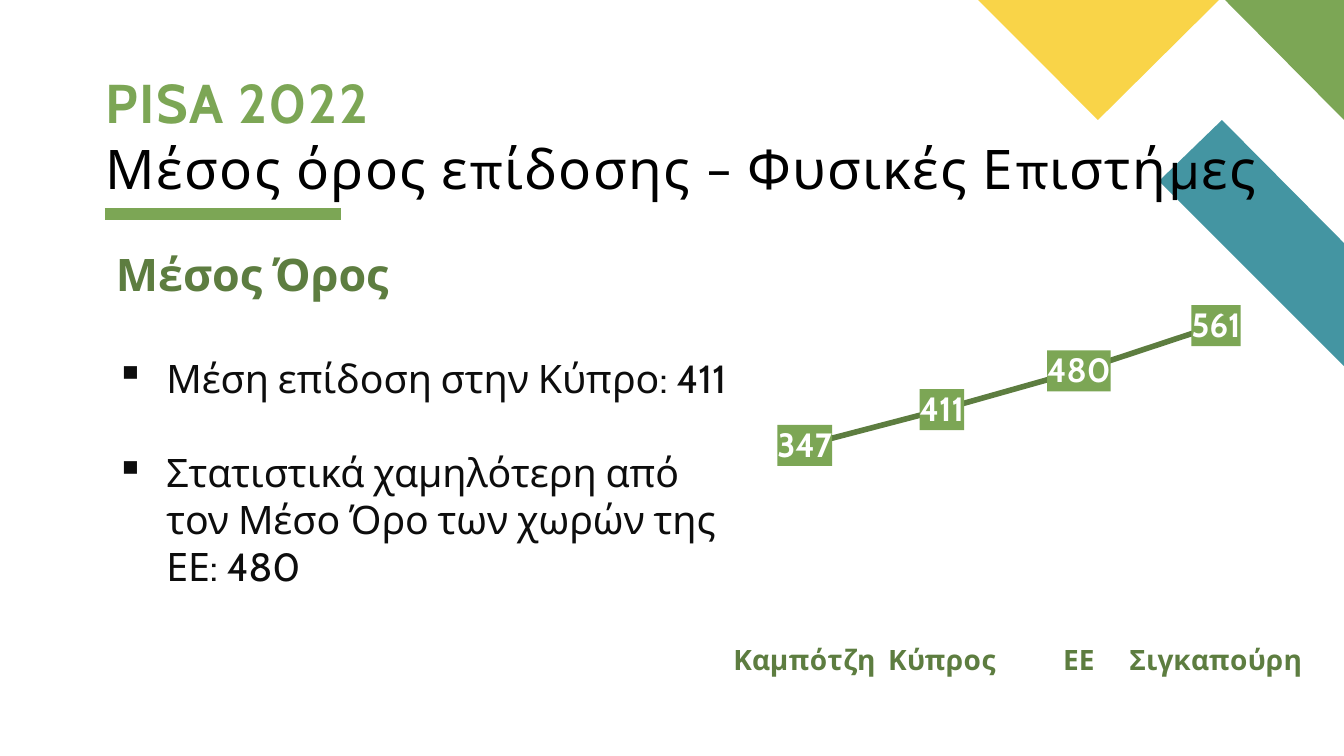
from lxml import etree
from pptx import Presentation
from pptx.chart.data import CategoryChartData
from pptx.dml.color import RGBColor
from pptx.enum.chart import XL_CHART_TYPE as ChartType
from pptx.enum.chart import XL_LABEL_POSITION as LabelPosition
from pptx.enum.chart import XL_MARKER_STYLE as MarkerStyle
from pptx.enum.chart import XL_TICK_MARK as TickMark
from pptx.enum.shapes import MSO_CONNECTOR as Connector
from pptx.oxml import parse_xml
from pptx.oxml.ns import nsdecls, qn
from pptx.util import Pt

PX = 9071.43  # EMU in one px
COLORS = {
    "green": "7CA655",
    "dark green": "5D7D40",
    "teal": "4495A2",
    "yellow": "F9D448",
    "black": "000000",
    "ink": "0D0D0D",
    "white": "FFFFFF",
}


def px(*lengths):
    return [round(length * PX) for length in lengths]


def write(para, text, size, color, font="Cabin", bold=False, spacing=0, before=0, bullet=None):
    """Fill a paragraph with one run; a bullet also gives it a hanging indent."""
    span = para.add_run()
    span.text = text
    span.font.size = Pt(size)
    span.font.name = font
    span.font.bold = bold
    span.font.color.rgb = RGBColor.from_string(COLORS[color])
    if spacing:
        span.font._element.set("spc", str(spacing * 100))
    para.space_before = Pt(before)
    if bullet:
        props = para._p.get_or_add_pPr()
        props.set("marL", "457200")
        props.set("indent", "-457200")
        etree.SubElement(props, qn("a:buChar")).set("char", bullet)


deck = Presentation()
deck.slide_width, deck.slide_height = px(1344, 756)
page = deck.slides.add_slide(deck.slide_layouts[6])

# Underline of the title
underline = page.shapes.add_connector(Connector.STRAIGHT, *px(105, 214, 341, 214))
underline.line.color.rgb = RGBColor.from_string(COLORS["green"])
underline.line.width = Pt(8)
etree.SubElement(underline._element.spPr, qn("a:effectLst"))

# Corner decoration
corner_pieces = [
    ("teal", [(1344, 366), (1344, 243), (1222, 120), (1159, 181)]),
    ("green", [(1344, 120), (1344, 0), (1225, 0)]),
    ("yellow", [(978, 0), (1098, 120), (1219, 0)]),
]
for color, points in corner_pieces:
    builder = page.shapes.build_freeform(*points[0], scale=PX)
    builder.add_line_segments(points[1:], close=True)
    piece = builder.convert_to_shape()
    piece.shadow.inherit = False
    piece.fill.solid()
    piece.fill.fore_color.rgb = RGBColor.from_string(COLORS[color])
    piece.line.fill.background()

# Title
title = page.shapes.add_textbox(*px(106, 69, 1154, 150)).text_frame
title.word_wrap = True
title.margin_left = title.margin_top = title.margin_right = title.margin_bottom = 0
write(title.paragraphs[0], "PISA 2022", 39, "green", bold=True, spacing=1)
write(title.add_paragraph(), "Μέσος όρος επίδοσης – Φυσικές Επιστήμες", 39, "black",
      font="Karla", spacing=1)

# Findings
findings = page.shapes.add_textbox(*px(106, 242, 632, 390)).text_frame
findings.word_wrap = True
write(findings.paragraphs[0], "Μέσος Όρος", 32, "dark green", bold=True)
for text, before in [
    ("Μέση επίδοση στην Κύπρο: 411", 38),
    ("Στατιστικά χαμηλότερη από τον Μέσο Όρο των χωρών της ΕΕ: 480", 34),
]:
    write(findings.add_paragraph(), text, 28, "ink", before=before, bullet="▪")

# Chart of mean scores
scores = CategoryChartData()
scores.categories = ["Καμπότζη", "Κύπρος", "ΕΕ", "Σιγκαπούρη"]
scores.add_series("Series 1", [347, 411, 480, 561])
chart = page.shapes.add_chart(ChartType.LINE_STACKED, *px(721, 296, 594, 390), scores).chart
chart.has_legend = False
chart.has_title = False

value_axis = chart.value_axis
value_axis.minimum_scale = 0
value_axis.maximum_scale = 600
value_axis.has_major_gridlines = False
value_axis.visible = False

category_axis = chart.category_axis
category_axis.major_tick_mark = TickMark.NONE
category_axis.format.line.fill.background()

plot = chart.plots[0]
plot.vary_by_categories = False
line = plot.series[0]
line.smooth = False
line.marker.style = MarkerStyle.NONE
line.format.line.color.rgb = RGBColor.from_string(COLORS["dark green"])
line.format.line.width = Pt(4)

labels = line.data_labels
labels.show_value = True
labels.position = LabelPosition.CENTER

# The category names take the chart font, which keeps each on one line
for font, size, color in [(chart.font, 20, "dark green"), (labels.font, 24, "white")]:
    font.name = "Cabin"
    font.size = Pt(size)
    font.bold = True
    font.color.rgb = RGBColor.from_string(COLORS[color])

# Filled value labels
labels._element.find(qn("c:txPr")).addprevious(parse_xml(
    f'<c:spPr {nsdecls("c", "a")}><a:solidFill><a:srgbClr val="{COLORS["green"]}"/>'
    "</a:solidFill></c:spPr>"))

deck.save("out.pptx")
